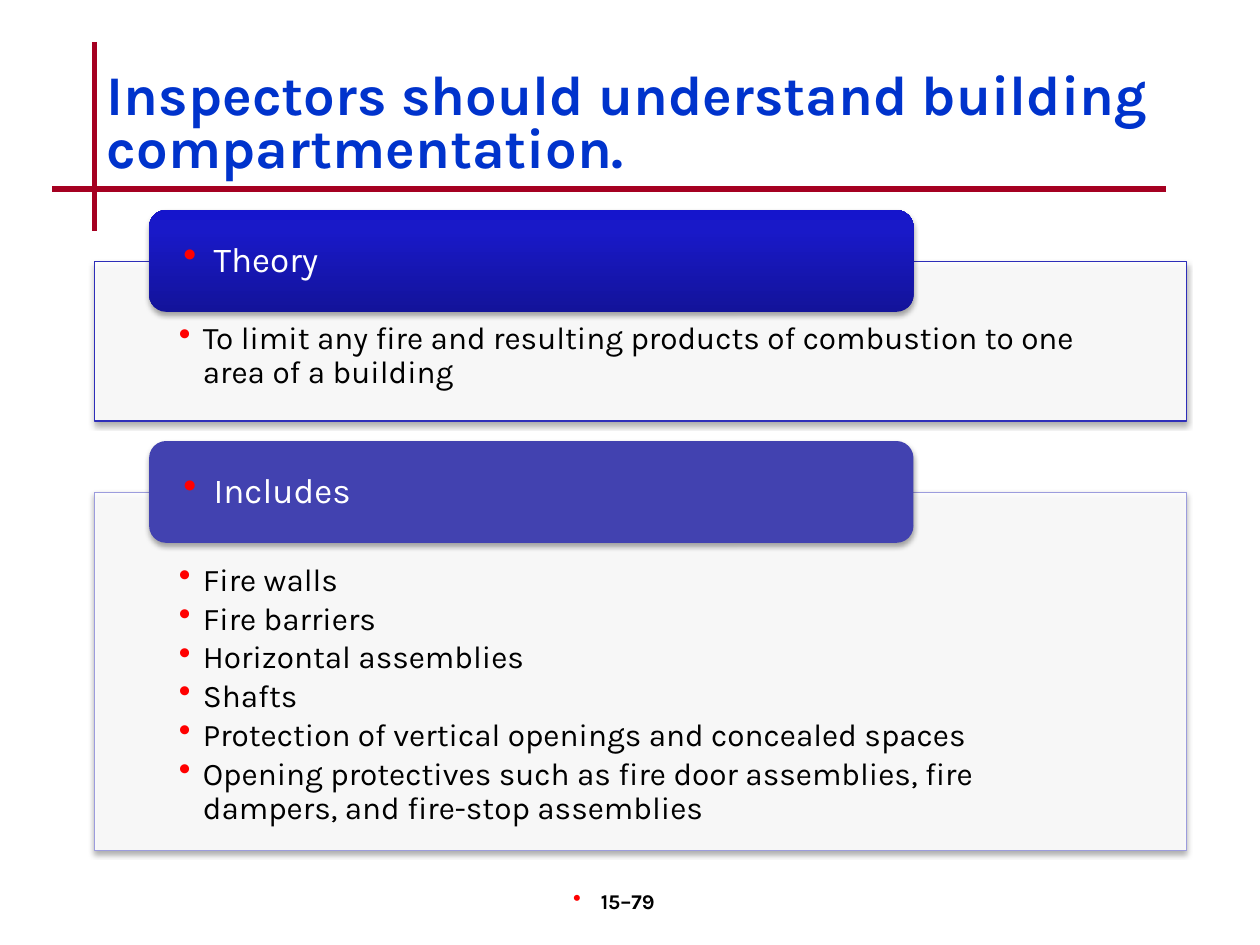
from lxml import etree
from pptx import Presentation, util as u
from pptx.dml.color import RGBColor
from pptx.enum import shapes, text
from pptx.oxml.ns import qn

FONT = "Karla"
COLS, ROWS = 120, 90
WIDTH, HEIGHT = u.Inches(10), u.Inches(7.5)
COLORS = {
    "rule": "A50021", "title": "0033CC", "bullet": "FF0000",
    "black": "000000", "white": "FFFFFF",
    "theory_line": "2E2EB9", "includes_line": "9C9CDD", "includes_bar": "4242B0",
    "bar_low": "13139A", "bar_mid": "1919C8", "bar_high": "1515CC",
}
THEORY_BAR = [(0, "bar_low"), (80, "bar_mid"), (100, "bar_high")]
THEORY = ["To limit any fire and resulting products of combustion to one area of a building"]
INCLUDES = [
    "Fire walls",
    "Fire barriers",
    "Horizontal assemblies",
    "Shafts",
    "Protection of vertical openings and concealed spaces",
    "Opening protectives such as fire door assemblies, fire dampers, and fire-stop assemblies",
]


def rgb(name):
    """Return a named colour."""
    return RGBColor.from_string(COLORS[name])


def grid(x, y, *size):
    """Turn columns and rows into slide lengths."""
    return [int(v * (HEIGHT / ROWS if i % 2 else WIDTH / COLS))
            for i, v in enumerate((x, y, *size))]


def sub(parent, tag, **attrs):
    """Append a drawing element with attributes."""
    return etree.SubElement(parent, qn(tag), {k: str(v) for k, v in attrs.items()})


def add_color(parent, name, alpha=None):
    """Append a colour element with optional opacity."""
    clr = sub(parent, "a:srgbClr", val=COLORS[name])
    if alpha is not None:
        sub(clr, "a:alpha", val=alpha * 1000)


def add_rule(slide, x1, y1, x2, y2):
    """Draw one of the crossing title rules."""
    line = slide.shapes.add_connector(shapes.MSO_CONNECTOR.STRAIGHT, *grid(x1, y1, x2, y2))
    line.line.color.rgb = rgb("rule")
    line.line.width = u.Pt(3)
    sub(line._element.spPr, "a:effectLst")


def add_shadow(sp):
    """Give a shape a soft shadow straight below."""
    sp.shadow.inherit = False
    effects = sp._element.spPr.find(qn("a:effectLst"))
    shadow = sub(effects, "a:outerShdw", blurRad=u.Pt(3.1), dist=u.Pt(1.8),
                 dir=5400000, rotWithShape=0)
    add_color(shadow, "black", 35)


def add_bullet(p, indent):
    """Give a paragraph a red hanging bullet."""
    pPr = p._p.get_or_add_pPr()
    pPr.set("marL", str(u.Inches(indent)))
    pPr.set("indent", str(-u.Inches(indent)))
    add_color(sub(pPr, "a:buClr"), "bullet")
    sub(pPr, "a:buSzPct", val=110000)
    sub(pPr, "a:buChar", char="•")


def add_text(slide, box, lines, size, color="black", bold=False, indent=None, level=0,
             spacing=0.9, after=0, insets=(0.1, 0.05, 0.1, 0.05),
             anchor=text.MSO_ANCHOR.TOP, align=text.PP_ALIGN.LEFT):
    """Add a wrapped text box with one paragraph per line."""
    tf = slide.shapes.add_textbox(*grid(*box)).text_frame
    tf.word_wrap = True
    tf.vertical_anchor = anchor
    tf.margin_left, tf.margin_top, tf.margin_right, tf.margin_bottom = map(u.Inches, insets)
    for i, line in enumerate(lines):
        p = tf.add_paragraph() if i else tf.paragraphs[0]
        p.level, p.alignment = level, align
        p.line_spacing, p.space_after = spacing, u.Pt(after)
        if indent:
            add_bullet(p, indent)
        r = p.add_run()
        r.text = line
        r.font.name, r.font.size, r.font.bold = FONT, u.Pt(size), bold
        r.font.color.rgb = rgb(color)


def add_panel(slide, box, line, lines):
    """Add an outlined panel with its bullet list."""
    sp = slide.shapes.add_shape(shapes.MSO_SHAPE.RECTANGLE, *grid(*box))
    sp.fill.solid()
    sp.fill.fore_color.rgb = rgb("white")
    clr = sp._element.spPr.find(qn("a:solidFill"))[0]
    sub(clr, "a:alpha", val=90000)
    sp.line.color.rgb = rgb(line)
    sp.line.width = u.Pt(0.75)
    add_shadow(sp)
    add_text(slide, box, lines, 18, indent=0.19, level=1, after=2.7,
             insets=(0.67, 0.57, 0.67, 0.14))


def add_bar(slide, box, fill, label):
    """Add a rounded heading bar, flat or graded, with its label."""
    sp = slide.shapes.add_shape(shapes.MSO_SHAPE.ROUNDED_RECTANGLE, *grid(*box))
    if isinstance(fill, str):
        sp.fill.solid()
        sp.fill.fore_color.rgb = rgb(fill)
    else:
        sp.fill.gradient()
        sp.fill.gradient_angle = 90
        stops = sp._element.spPr.find(".//" + qn("a:gsLst"))
        stops[:] = []
        for pos, name in fill:
            add_color(sub(stops, "a:gs", pos=pos * 1000), name)
    sp.line.fill.background()
    add_shadow(sp)
    x, y, w, h = box
    add_text(slide, (x + 0.5, y + 0.5, w - 1, h - 1), [label], 20, "white", indent=0.24,
             insets=(0.23, 0, 0.23, 0), anchor=text.MSO_ANCHOR.MIDDLE)


def add_section(slide, top, height, label, lines, bar, line):
    """Add a panel with a heading bar across its top edge."""
    add_panel(slide, (9, top + 4.9, 104, height), line, lines)
    add_bar(slide, (14.2, top, 72.8, 9.7), bar, label)


def main():
    """Build and save the slide."""
    prs = Presentation()
    prs.slide_width, prs.slide_height = WIDTH, HEIGHT
    slide = prs.slides.add_slide(prs.slide_layouts[6])
    add_rule(slide, 9, 4, 9, 22)
    add_rule(slide, 5, 18, 111, 18)
    add_text(slide, (47, 84, 25, 6), ["15–79"], 12, bold=True, indent=0.22, spacing=1,
             insets=(0.1, 0.05, 0.27, 0.05), align=text.PP_ALIGN.CENTER)
    add_text(slide, (9, 6, 102, 12),
             ["Inspectors should understand building compartmentation."],
             32, "title", bold=True, spacing=0.8, anchor=text.MSO_ANCHOR.MIDDLE)
    add_section(slide, 20, 15.2, "Theory", THEORY, THEORY_BAR, "theory_line")
    add_section(slide, 42, 34.1, "Includes", INCLUDES, "includes_bar", "includes_line")
    prs.save("out.pptx")


if __name__ == "__main__":
    main()
